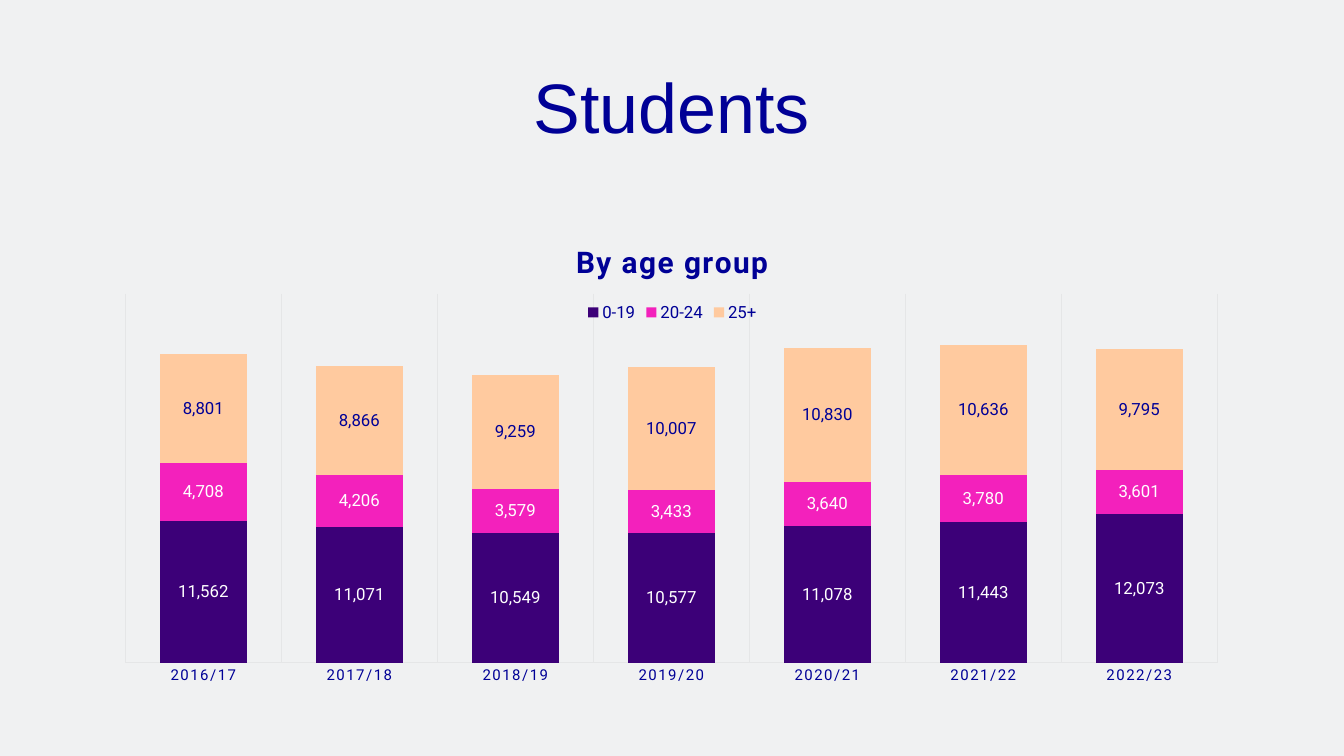
from dataclasses import dataclass

import lxml.etree
import pptx
import pptx.chart.data
import pptx.dml.color
import pptx.enum.chart
import pptx.enum.text
import pptx.oxml.ns
import pptx.util

Inches = pptx.util.Inches
Pt = pptx.util.Pt
qn = pptx.oxml.ns.qn

COLORS = {
    "background": "F0F1F2",
    "navy": "000096",
    "grid": "E5E6E7",
    "purple": "3C0078",
    "pink": "F321BC",
    "peach": "FFCA9F",
    "white": "FFFFFF",
    "grey": "575A5D",
}
CHART_FONT = "Roboto"
COUNT_FORMAT = "#,##0"
SLIDE_WIDTH = Inches(40 / 3)
CONTENT_WIDTH = Inches(11.97)
CONTENT_LEFT = (SLIDE_WIDTH - CONTENT_WIDTH) // 2
YEARS = ["2016/17", "2017/18", "2018/19", "2019/20", "2020/21", "2021/22", "2022/23"]


@dataclass(frozen=True)
class AgeGroup:
    name: str
    students: tuple[int, ...]
    fill: str
    label: str


AGE_GROUPS = [
    AgeGroup("0-19", (11562, 11071, 10549, 10577, 11078, 11443, 12073), "purple", "white"),
    AgeGroup("20-24", (4708, 4206, 3579, 3433, 3640, 3780, 3601), "pink", "white"),
    AgeGroup("25+", (8801, 8866, 9259, 10007, 10830, 10636, 9795), "peach", "navy"),
]


def rgb(name: str) -> pptx.dml.color.RGBColor:
    return pptx.dml.color.RGBColor.from_string(COLORS[name])


def style_font(font, name: str, size: float, color: str, bold: bool = False) -> None:
    font.name = name
    font.size = Pt(size)
    font.bold = bold
    font.color.rgb = rgb(color)


def style_line(line) -> None:
    line.color.rgb = rgb("grid")
    line.width = Pt(0.75)


def place(part, index: int, **fractions: float) -> None:
    """Give a chart part a manual layout, as its child number index."""
    for old_layout in part.findall(qn("c:layout")):
        part.remove(old_layout)
    layout = lxml.etree.Element(qn("c:layout"))
    manual = lxml.etree.SubElement(layout, qn("c:manualLayout"))
    settings = {"xMode": "edge", "yMode": "edge", **fractions}
    if "w" in fractions:
        settings = {"layoutTarget": "inner", **settings}
    for tag, value in settings.items():
        lxml.etree.SubElement(manual, qn(f"c:{tag}")).set("val", str(value))
    part.insert(index, layout)


def add_heading(slide) -> None:
    box = slide.shapes.add_textbox(CONTENT_LEFT, Inches(0.72), CONTENT_WIDTH, Inches(1.77))
    frame = box.text_frame
    frame.word_wrap = True
    frame.margin_left = frame.margin_right = frame.margin_top = frame.margin_bottom = 0
    frame.text = "Students"
    heading = frame.paragraphs[0]
    heading.alignment = pptx.enum.text.PP_ALIGN.CENTER
    heading.line_spacing = 0.9
    style_font(heading.runs[0].font, "Arial", 50, "navy")


def style_axes(chart) -> None:
    years = chart.category_axis
    years.major_tick_mark = pptx.enum.chart.XL_TICK_MARK.NONE
    years.has_major_gridlines = True
    style_line(years.major_gridlines.format.line)
    style_line(years.format.line)
    style_font(years.tick_labels.font, CHART_FONT, 10.64, "navy")

    counts = chart.value_axis
    counts.minimum_scale = 0
    counts.maximum_scale = 30000
    counts.has_major_gridlines = False
    counts.visible = False


def style_bars(plot) -> None:
    plot.gap_width = 79
    plot.overlap = 100
    plot.vary_by_categories = False
    for group, series in zip(AGE_GROUPS, plot.series):
        series.format.fill.solid()
        series.format.fill.fore_color.rgb = rgb(group.fill)
        labels = series.data_labels
        labels.show_value = True
        labels.position = pptx.enum.chart.XL_LABEL_POSITION.CENTER
        labels.number_format = COUNT_FORMAT
        labels.number_format_is_linked = False
        style_font(labels.font, CHART_FONT, 12, group.label)


def add_age_chart(slide) -> None:
    data = pptx.chart.data.CategoryChartData(number_format=COUNT_FORMAT)
    data.categories = YEARS
    for group in AGE_GROUPS:
        data.add_series(group.name, group.students)
    chart = slide.shapes.add_chart(
        pptx.enum.chart.XL_CHART_TYPE.COLUMN_STACKED,
        CONTENT_LEFT, Inches(2.2), CONTENT_WIDTH, Inches(5.21), data,
    ).chart
    style_font(chart.font, CHART_FONT, 10, "grey")

    chart.has_title = True
    chart.chart_title.include_in_layout = False
    title = chart.chart_title.text_frame
    title.text = "By age group"
    style_font(title.paragraphs[0].runs[0].font, CHART_FONT, 21.3, "navy", bold=True)

    chart.has_legend = True
    chart.legend.position = pptx.enum.chart.XL_LEGEND_POSITION.TOP
    chart.legend.include_in_layout = False
    style_font(chart.legend.font, CHART_FONT, 12, "navy")

    style_axes(chart)
    style_bars(chart.plots[0])

    root = chart.element
    place(root.find(".//" + qn("c:title")), 1, x=0.416, y=0.03)
    place(root.find(".//" + qn("c:legend")), 1, x=0.426, y=0.146)
    place(root.find(".//" + qn("c:plotArea")), 0, x=0.047, y=0.137, w=0.905, h=0.703)

    # Letter spacing in hundredths of a point
    for properties in root.xpath(".//c:title//a:rPr | .//c:catAx/c:txPr//a:defRPr"):
        properties.set("spc", "120")


def main() -> None:
    deck = pptx.Presentation()
    deck.slide_width = SLIDE_WIDTH
    deck.slide_height = Inches(7.5)
    slide = deck.slides.add_slide(deck.slide_layouts[6])
    slide.background.fill.solid()
    slide.background.fill.fore_color.rgb = rgb("background")
    add_heading(slide)
    add_age_chart(slide)
    deck.save("out.pptx")


if __name__ == "__main__":
    main()
